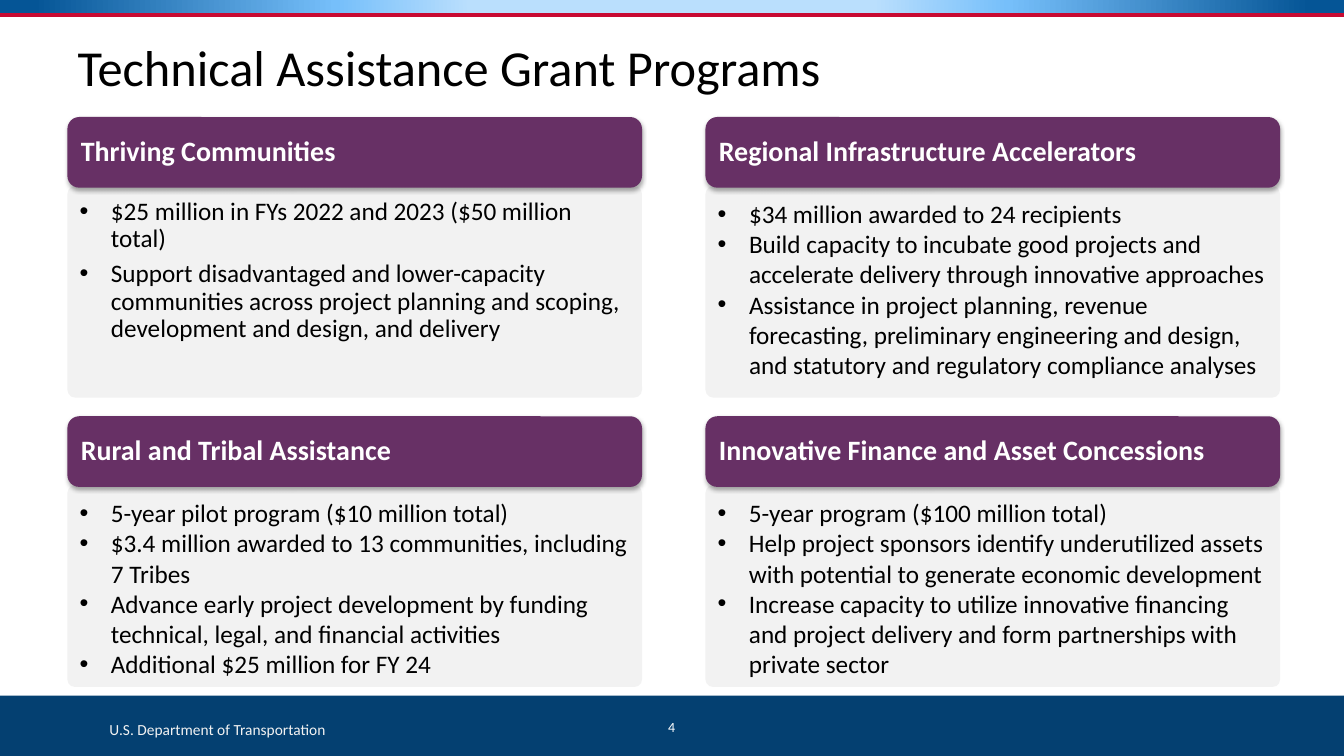
import pptx
import pptx.util
import pptx.dml.color
import pptx.enum.shapes
import pptx.enum.text
import pptx.oxml
import pptx.oxml.ns

Cm, Pt = pptx.util.Cm, pptx.util.Pt
RGB = pptx.dml.color.RGBColor.from_string
Shapes = pptx.enum.shapes.MSO_SHAPE
Align = pptx.enum.text.PP_ALIGN
Anchor = pptx.enum.text.MSO_ANCHOR
namespace = pptx.oxml.ns.nsdecls("a")

THEME = {
    "colors": {"header": "673065", "card": "F2F2F2", "footer": "044071", "rule": "C80A32"},
    "band_stops": [(30, "BADFFD"), (50, "76BFFA"), (95, "055596")],
    "text": {
        "title": {"size": Pt(36), "bold": False, "color": "000000"},
        "header": {"size": Pt(20), "bold": True, "color": "FFFFFF"},
        "body": {"size": Pt(18), "bold": False, "color": "000000"},
        "department": {"size": Pt(11), "bold": False, "color": "F2F2F2"},
        "number": {"size": Pt(10), "bold": False, "color": "FFFFFF"},
    },
    "font": "Calibri",
}


def add_box(kind, left, top, width, height, color):
    shape = slide.shapes.add_shape(kind, Cm(left), Cm(top), Cm(width), Cm(height))
    shape.shadow.inherit = False
    shape.fill.solid()
    shape.fill.fore_color.rgb = RGB(THEME["colors"][color])
    shape.line.fill.background()
    return shape


def write_text(paragraph, text, style, **paragraph_format):
    for name, value in {"alignment": Align.LEFT, **paragraph_format}.items():
        setattr(paragraph, name, value)
    run = paragraph.add_run()
    run.text = text
    font_format = dict(THEME["text"][style], name=THEME["font"])
    run.font.color.rgb = RGB(font_format.pop("color"))
    for name, value in font_format.items():
        setattr(run.font, name, value)


# Slide
WIDTH, HEIGHT = 33.87, 19.05
presentation = pptx.Presentation()
presentation.slide_width, presentation.slide_height = Cm(WIDTH), Cm(HEIGHT)
slide = presentation.slides.add_slide(presentation.slide_layouts[5])

# Top band with a radial gradient, and the red rule under it
BAND_HEIGHT = 0.38
band = add_box(Shapes.RECTANGLE, 0, 0, WIDTH, BAND_HEIGHT, "footer")
stops = "".join(
    f'<a:gs pos="{position * 1000}"><a:srgbClr val="{color}"/></a:gs>'
    for position, color in THEME["band_stops"]
)
gradient = pptx.oxml.parse_xml(
    f'<a:gradFill {namespace} rotWithShape="1"><a:gsLst>{stops}</a:gsLst><a:path path="circle">'
    '<a:fillToRect l="50000" t="-80000" r="50000" b="180000"/></a:path></a:gradFill>'
)
solid_fill = band._element.spPr.find(pptx.oxml.ns.qn("a:solidFill"))
band._element.spPr.replace(solid_fill, gradient)

rule = slide.shapes.add_connector(
    pptx.enum.shapes.MSO_CONNECTOR.STRAIGHT, Cm(WIDTH), Cm(BAND_HEIGHT), Cm(0), Cm(BAND_HEIGHT)
)
rule.line.color.rgb = RGB(THEME["colors"]["rule"])
rule.line.width = Pt(2.5)
rule._element.spPr.append(pptx.oxml.parse_xml(f"<a:effectLst {namespace}/>"))

# Footer bar with department and slide number
add_box(Shapes.RECTANGLE, 0, 17.53, WIDTH, HEIGHT - 17.53, "footer")
footer_texts = [
    ("U.S. Department of Transportation", "department", Align.LEFT, (2.51, 18.03, 6.35, 0.74)),
    ("4", "number", Align.CENTER, (15.77, 17.98, 2.31, 1.02)),
]
for text, style, alignment, position in footer_texts:
    text_box = slide.shapes.add_textbox(*map(Cm, position))
    text_box.text_frame.word_wrap = True
    write_text(text_box.text_frame.paragraphs[0], text, style, alignment=alignment)

# Title
title = slide.shapes.title
title_format = {"left": Cm(1.7), "top": Cm(1.02), "width": Cm(30.48), "height": Cm(1.52)}
for name, value in title_format.items():
    setattr(title, name, value)
title.text_frame.vertical_anchor = Anchor.MIDDLE
title.text_frame.auto_size = pptx.enum.text.MSO_AUTO_SIZE.NONE
write_text(title.text_frame.paragraphs[0], "Technical Assistance Grant Programs", "title",
           line_spacing=0.9)

# Program cards, row by row: heading, list format, list
tight = {"line_spacing": 0.9, "space_before": Pt(6)}
programs = [
    ("Thriving Communities", tight, [
        "$25 million in FYs 2022 and 2023 ($50 million total)",
        "Support disadvantaged and lower-capacity communities across project planning and "
        "scoping, development and design, and delivery",
    ]),
    ("Regional Infrastructure Accelerators", {}, [
        "$34 million awarded to 24 recipients",
        "Build capacity to incubate good projects and accelerate delivery through "
        "innovative approaches",
        "Assistance in project planning, revenue forecasting, preliminary engineering and "
        "design, and statutory and regulatory compliance analyses",
    ]),
    ("Rural and Tribal Assistance", {}, [
        "5-year pilot program ($10 million total)",
        "$3.4 million awarded to 13 communities, including 7 Tribes",
        "Advance early project development by funding technical, legal, and financial activities",
        "Additional $25 million for FY 24",
    ]),
    ("Innovative Finance and Asset Concessions", {}, [
        "5-year program ($100 million total)",
        "Help project sponsors identify underutilized assets with potential to generate "
        "economic development",
        "Increase capacity to utilize innovative financing and project delivery and form "
        "partnerships with private sector",
    ]),
]
CARD_WIDTH, HEADER_HEIGHT, BODY_OFFSET = 14.48, 1.78, 1.74
BODY_HEIGHTS = [5.33, 5.08]
INDENT = Cm(0.79)

for index, (heading, list_format, items) in enumerate(programs):
    row, column = divmod(index, 2)
    left, top = 1.7 + column * 16.08, 2.95 + row * 7.54

    # Card body with its list
    body = add_box(Shapes.ROUNDED_RECTANGLE, left, top + BODY_OFFSET, CARD_WIDTH,
                   BODY_HEIGHTS[row], "card")
    body.adjustments[0] = 0.037
    body.text_frame.vertical_anchor = Anchor.TOP
    for number, item in enumerate(items):
        paragraph = body.text_frame.add_paragraph() if number else body.text_frame.paragraphs[0]
        properties = paragraph._p.get_or_add_pPr()
        properties.set("marL", str(INDENT))
        properties.set("indent", str(-INDENT))
        for bullet in ('<a:buFont {} typeface="Arial"/>', '<a:buChar {} char="•"/>'):
            properties.append(pptx.oxml.parse_xml(bullet.format(namespace)))
        spacing = list_format if number else {**list_format, "space_before": Pt(0)}
        write_text(paragraph, item, "body", **spacing)

    # Card header with a soft shadow
    header = add_box(Shapes.ROUNDED_RECTANGLE, left, top, CARD_WIDTH, HEADER_HEIGHT, "header")
    header.text_frame.vertical_anchor = Anchor.MIDDLE
    write_text(header.text_frame.paragraphs[0], heading, "header", line_spacing=0.9)
    header._element.spPr.find(pptx.oxml.ns.qn("a:effectLst")).append(pptx.oxml.parse_xml(
        f'<a:outerShdw {namespace} blurRad="{Pt(3.1)}" dist="{Pt(1.8)}" dir="5400000" '
        'rotWithShape="0"><a:srgbClr val="000000"><a:alpha val="35000"/></a:srgbClr></a:outerShdw>'
    ))
    for shape in (body, header):
        for side in ("left", "top", "right", "bottom"):
            setattr(shape.text_frame, f"margin_{side}", Cm(0.25))

presentation.save("out.pptx")
